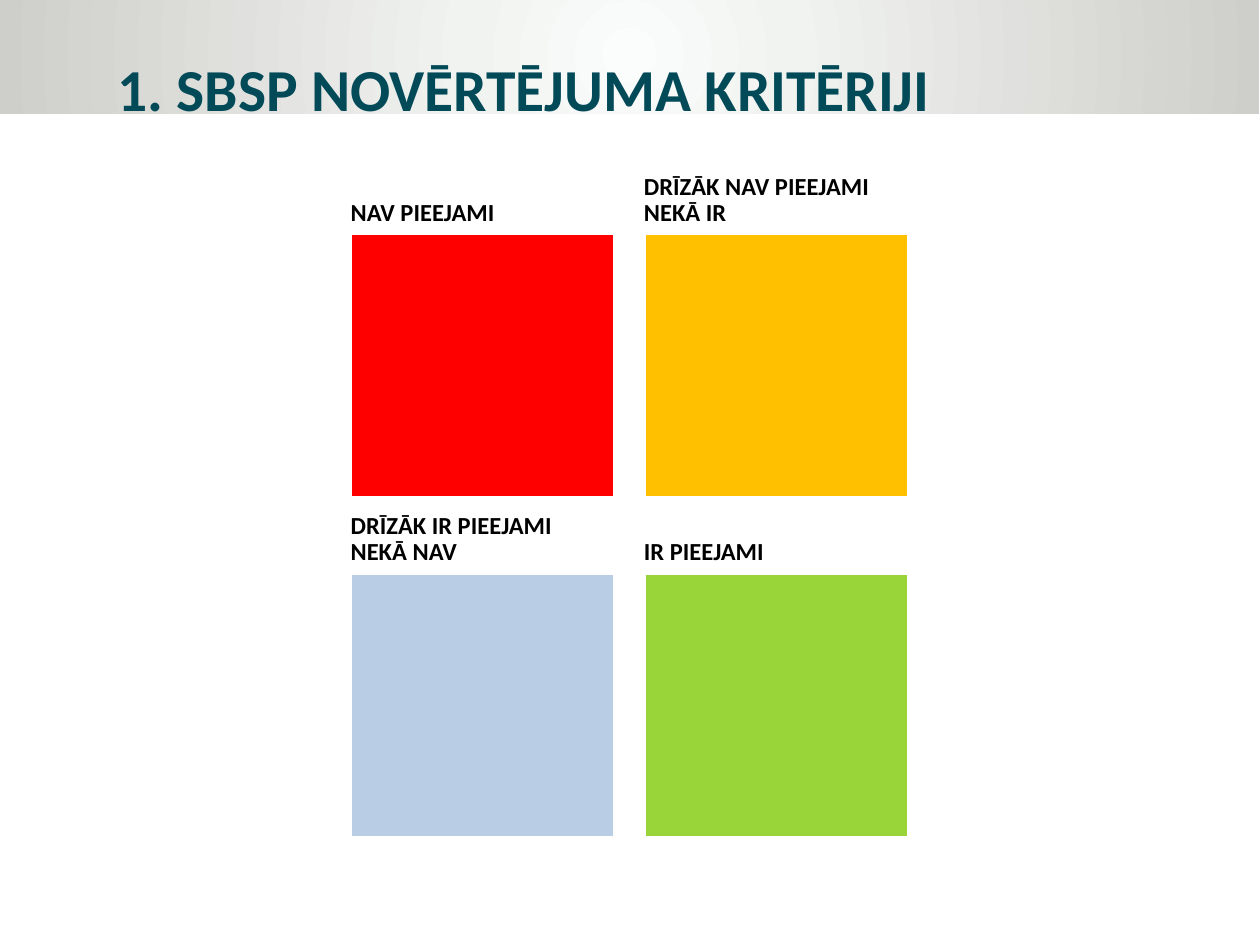
from dataclasses import dataclass
from lxml.etree import SubElement
from pptx import Presentation
from pptx.dml.color import RGBColor
from pptx.enum.shapes import MSO_SHAPE
from pptx.enum.text import MSO_ANCHOR
from pptx.oxml.ns import qn
from pptx.util import Pt


@dataclass(frozen=True)
class Theme:
    font: str = "Calibri"
    title: str = "034A58"
    text: str = "000000"
    edge: str = "FFFFFF"
    glow: tuple = ((0, "FBFCFC"), (26, "F1F3F1"), (100, "CECECA"))
    head: int = 34
    label: int = 14


THEME = Theme()
TILES = [
    ("NAV PIEEJAMI", "FF0000"),
    ("DRĪZĀK NAV PIEEJAMI NEKĀ IR", "FFC000"),
    ("DRĪZĀK IR PIEEJAMI NEKĀ NAV", "B9CDE5"),
    ("IR PIEEJAMI", "99D438"),
]


def add_rect(shapes, left, top, width, height):
    rect = shapes.add_shape(
        MSO_SHAPE.RECTANGLE, Pt(left), Pt(top), Pt(width), Pt(height))
    rect.shadow.inherit = False
    return rect


def add_text(shapes, left, top, width, height, text, size, color):
    box = shapes.add_textbox(Pt(left), Pt(top), Pt(width), Pt(height))
    frame = box.text_frame
    frame.word_wrap = True
    frame.text = text
    font = frame.paragraphs[0].runs[0].font
    font.name, font.size, font.bold = THEME.font, Pt(size), True
    font.color.rgb = RGBColor.from_string(color)
    return frame


def set_glow(shape, stops):
    shape.fill.gradient()
    grad = shape.element.spPr.find(qn("a:gradFill"))
    for child in list(grad):
        grad.remove(child)
    group = SubElement(grad, qn("a:gsLst"))
    for place, color in stops:
        stop = SubElement(group, qn("a:gs"), pos=str(place * 1000))
        SubElement(stop, qn("a:srgbClr"), val=color)
    route = SubElement(grad, qn("a:path"))
    route.set("path", "circle")
    SubElement(route, qn("a:fillToRect"), l="50000", t="50000", r="50000", b="50000")


def add_header(shapes, left, top, width, height):
    band = add_rect(shapes, left, top, width, height)
    set_glow(band, THEME.glow)
    band.line.fill.background()
    add_text(shapes, left + 60, top + 28.2, 590, 48.2,
             "1. SBSP NOVĒRTĒJUMA KRITĒRIJI", THEME.head, THEME.title)


def add_tile(shapes, left, top, side, text, color):
    frame = add_text(shapes, left, top, side, 23, text, THEME.label, THEME.text)
    frame.vertical_anchor = MSO_ANCHOR.BOTTOM
    frame.margin_left = frame.margin_bottom = 0
    frame.margin_top = frame.margin_right = Pt(4.3)
    para = frame.paragraphs[0]
    para.line_spacing = 0.9
    para.space_after = Pt(4.9)
    tile = add_rect(shapes, left, top + 26.8, side, side)
    tile.fill.solid()
    tile.fill.fore_color.rgb = RGBColor.from_string(color)
    tile.line.color.rgb = RGBColor.from_string(THEME.edge)
    tile.line.width = Pt(2)


def add_grid(shapes, left, top, width, height):
    side = 151.2
    across = width - side
    down = height - side - 26.8
    group = shapes.add_group_shape().shapes
    for index, (text, color) in enumerate(TILES):
        row, col = divmod(index, 2)
        add_tile(group, left + col * across, top + row * down, side, text, color)


def main():
    deck = Presentation()
    deck.slide_width, deck.slide_height = Pt(720), Pt(540)
    shapes = deck.slides.add_slide(deck.slide_layouts[6]).shapes
    add_header(shapes, 0, -2, 719.5, 67)
    add_grid(shapes, 200.4, 106.6, 318.8, 372)
    deck.save("out.pptx")


if __name__ == "__main__":
    main()
